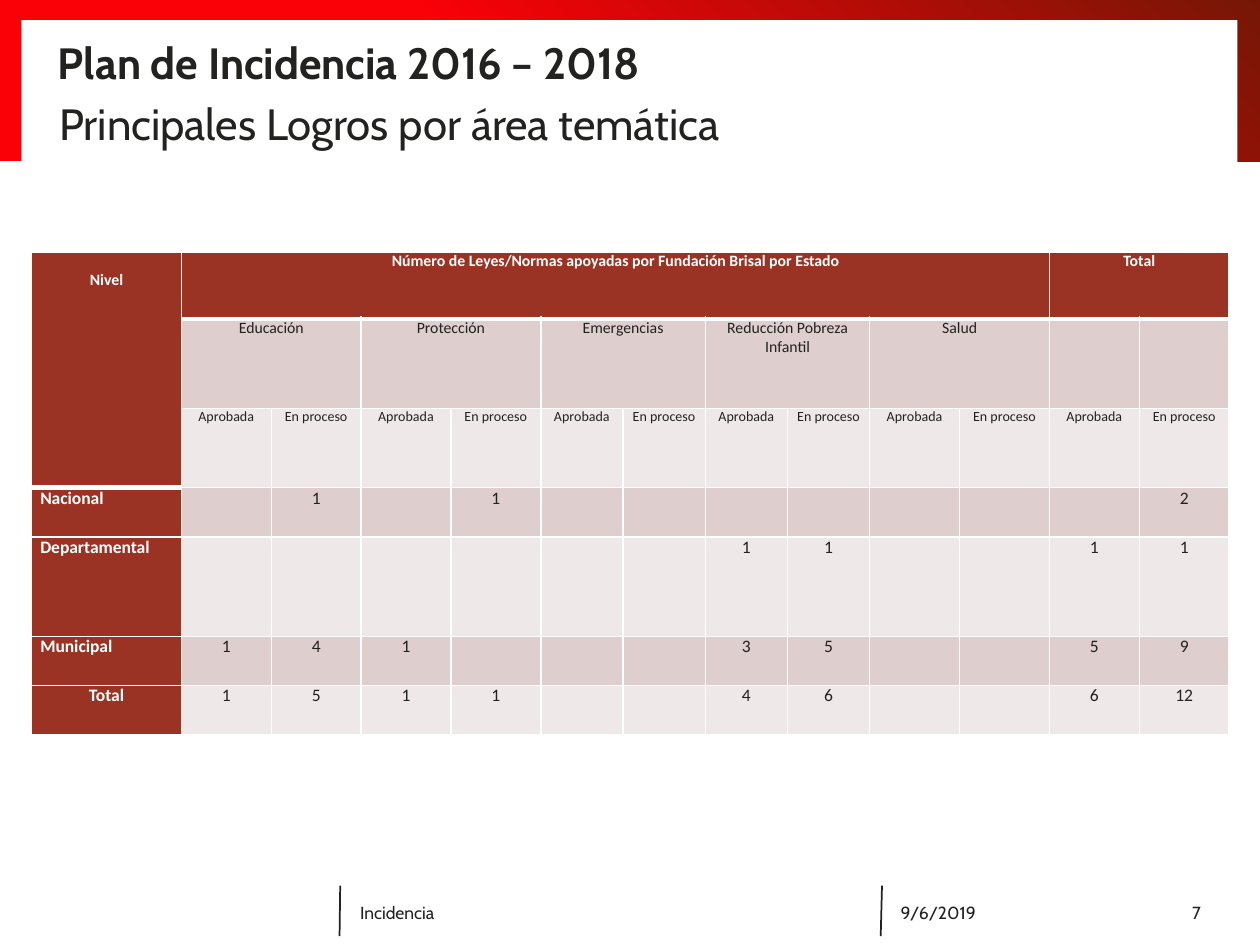
from dataclasses import dataclass

from lxml import etree
from pptx import Presentation
from pptx import util as u
from pptx.dml.color import RGBColor
from pptx.enum import shapes, text
from pptx.oxml import ns

WIDE, HIGH = u.Inches(10), u.Inches(7.5)
LEFT, MID, RIGHT = text.PP_ALIGN.LEFT, text.PP_ALIGN.CENTER, text.PP_ALIGN.RIGHT


@dataclass(frozen=True)
class Theme:
    """Colours, fonts and type sizes of the slide."""
    ink: str = "222221"
    white: str = "FFFFFF"
    red: str = "FA0007"
    dark: str = "761706"
    brick: str = "9A3324"
    rose: str = "DECECD"
    pale: str = "EFE8E8"
    face: str = "Cabin"
    grid: str = "Calibri"
    head: int = 25
    body: int = 10
    label: int = 9
    small: int = 8


T = Theme()
COLS = [11.9] + [7.13] * 4 + [6.53] * 4 + [7.13] * 4
ROWS = [7.07, 9.47, 8.4, 5.2, 10.53, 5.2, 5.2]
AREAS = ["Educación", "Protección", "Emergencias", "Reducción Pobreza Infantil", "Salud"]
STATES = ["Aprobada", "En proceso"]
COUNTS = {
    "Nacional": {2: 1, 4: 1, 12: 2},
    "Departamental": {7: 1, 8: 1, 11: 1, 12: 1},
    "Municipal": {1: 1, 2: 4, 3: 1, 7: 3, 8: 5, 11: 5, 12: 9},
    "Total": {1: 1, 2: 5, 3: 1, 4: 1, 7: 4, 8: 6, 11: 6, 12: 12},
}


def rgb(code):
    """Turn a hex code into a colour."""
    return RGBColor.from_string(code)


def across(share):
    """Turn a percentage of the slide width into a length."""
    return round(WIDE * share / 100)


def down(share):
    """Turn a percentage of the slide height into a length."""
    return round(HIGH * share / 100)


def place(x, y, w, h):
    """Turn four percentages into left, top, width and height."""
    return across(x), down(y), across(w), down(h)


def write(frame, words, size=T.body, face=T.face, color=T.ink, bold=False, align=LEFT):
    """Fill a text frame with one formatted paragraph."""
    para = frame.paragraphs[0]
    para.alignment = align
    run = para.add_run()
    run.text = words
    font = run.font
    font.size, font.name, font.bold = u.Pt(size), face, bold
    font.color.rgb = rgb(color)


def setup(frame, anchor, inset):
    """Set wrapping, anchor and, when asked, zero insets."""
    frame.word_wrap = True
    frame.auto_size = text.MSO_AUTO_SIZE.NONE
    frame.vertical_anchor = anchor
    if not inset:
        frame.margin_left = frame.margin_right = 0
        frame.margin_top = frame.margin_bottom = 0


def label(slide, words, at, anchor=text.MSO_ANCHOR.MIDDLE, inset=True, **form):
    """Add a text box."""
    frame = slide.shapes.add_textbox(*place(*at)).text_frame
    setup(frame, anchor, inset)
    write(frame, words, **form)


def panel(slide, at):
    """Add a plain white rectangle without outline or shadow."""
    shape = slide.shapes.add_shape(shapes.MSO_SHAPE.RECTANGLE, *place(*at))
    shape.shadow.inherit = False
    shape.line.fill.background()
    shape.fill.solid()
    shape.fill.fore_color.rgb = rgb(T.white)
    return shape


def blend(shape):
    """Give a shape the red diagonal gradient."""
    shape.fill.gradient()
    shape.fill.gradient_angle = 45
    for stop, spot, code in zip(shape.fill.gradient_stops, (0.4, 1), (T.red, T.dark)):
        stop.position = spot
        stop.color.rgb = rgb(code)


def rule(slide, top, end):
    """Draw a thin footer divider."""
    line = slide.shapes.add_connector(
        shapes.MSO_CONNECTOR.STRAIGHT, across(top), down(93.73), across(end), down(99.07))
    line.line.color.rgb = rgb(T.ink)
    line.line.width = u.Pt(1)
    etree.SubElement(line._element.spPr, ns.qn("a:effectLst"))


def edge(cell, thick):
    """Draw white cell borders, with a heavy bottom when thick."""
    props = cell._tc.get_or_add_tcPr()
    for side in "LRTB":
        size = 3 if thick and side == "B" else 1
        line = etree.SubElement(props, ns.qn(f"a:ln{side}"), w=str(u.Pt(size)))
        fill = etree.SubElement(line, ns.qn("a:solidFill"))
        etree.SubElement(fill, ns.qn("a:srgbClr"), val=T.white)


def paint(table):
    """Set borders, fill and margins of every cell."""
    for r in range(len(ROWS)):
        for c in range(len(COLS)):
            cell = table.cell(r, c)
            edge(cell, r == 0 or (r == 2 and c == 0))
            cell.fill.solid()
            tone = T.brick if r == 0 or c == 0 else T.rose if r % 2 else T.pale
            cell.fill.fore_color.rgb = rgb(tone)
            cell.margin_left = cell.margin_right = u.Inches(0.07)
            cell.margin_top = cell.margin_bottom = 0


def span(table, row, col, rows=1, cols=1):
    """Merge a block of cells and return its first cell."""
    cell = table.cell(row, col)
    cell.merge(table.cell(row + rows - 1, col + cols - 1))
    return cell


def heads(table):
    """Write the three header rows."""
    form = dict(size=T.label, face=T.grid, align=MID)
    bold = dict(form, color=T.white, bold=True)
    level = span(table, 0, 0, rows=3)
    level.margin_top = u.Inches(0.15)
    write(level.text_frame, "Nivel", **bold)
    write(span(table, 0, 1, cols=10).text_frame,
          "Número de Leyes/Normas apoyadas por Fundación Brisal por Estado", **bold)
    write(span(table, 0, 11, cols=2).text_frame, "Total", **bold)
    for i, area in enumerate(AREAS):
        write(span(table, 1, 1 + 2 * i, cols=2).text_frame, area, **form)
    for c in range(1, len(COLS)):
        write(table.cell(2, c).text_frame, STATES[(c - 1) % 2], **dict(form, size=T.small))


def tally(table):
    """Write the level names and their counts."""
    for r, (name, counts) in enumerate(COUNTS.items(), 3):
        write(table.cell(r, 0).text_frame, name, face=T.grid, color=T.white, bold=True,
              align=MID if name == "Total" else LEFT)
        for c, count in counts.items():
            write(table.cell(r, c).text_frame, str(count), face=T.grid, align=MID)


def chart(slide):
    """Add the table of laws by level and area."""
    table = slide.shapes.add_table(
        len(ROWS), len(COLS), *place(2.5, 26.67, sum(COLS), sum(ROWS))).table
    for col, share in zip(table.columns, COLS):
        col.width = across(share)
    for row, share in zip(table.rows, ROWS):
        row.height = down(share)
    paint(table)
    heads(table)
    tally(table)


def title(slide, words, at):
    """Move and fill the title placeholder."""
    shape = slide.shapes.title
    shape.left, shape.top, shape.width, shape.height = place(*at)
    setup(shape.text_frame, text.MSO_ANCHOR.MIDDLE, False)
    write(shape.text_frame, words, size=T.head, bold=True)


def main():
    """Build and save the slide."""
    deck = Presentation()
    deck.slide_width, deck.slide_height = WIDE, HIGH
    slide = deck.slides.add_slide(deck.slide_layouts[5])
    blend(panel(slide, (0, 0, 100, 17.07)))
    panel(slide, (1.7, 2.13, 96.5, 15.73))
    rule(slide, 27, 26.95)
    rule(slide, 70, 69.9)
    title(slide, "Plan de Incidencia 2016 – 2018", (4.6, 2.93, 90.6, 7.33))
    slide.shapes._spTree.append(slide.shapes.title._element)
    label(slide, "Principales Logros por área temática", (4.7, 10.27, 90.6, 5.33),
          anchor=text.MSO_ANCHOR.TOP, inset=False, size=T.head)
    chart(slide)
    label(slide, "Incidencia", (27.6, 93.87, 41.8, 5.33))
    label(slide, "9/6/2019", (70.5, 93.87, 17.3, 5.33))
    label(slide, "7", (87.8, 93.87, 8.5, 5.33), align=RIGHT)
    deck.save("out.pptx")


if __name__ == "__main__":
    main()
